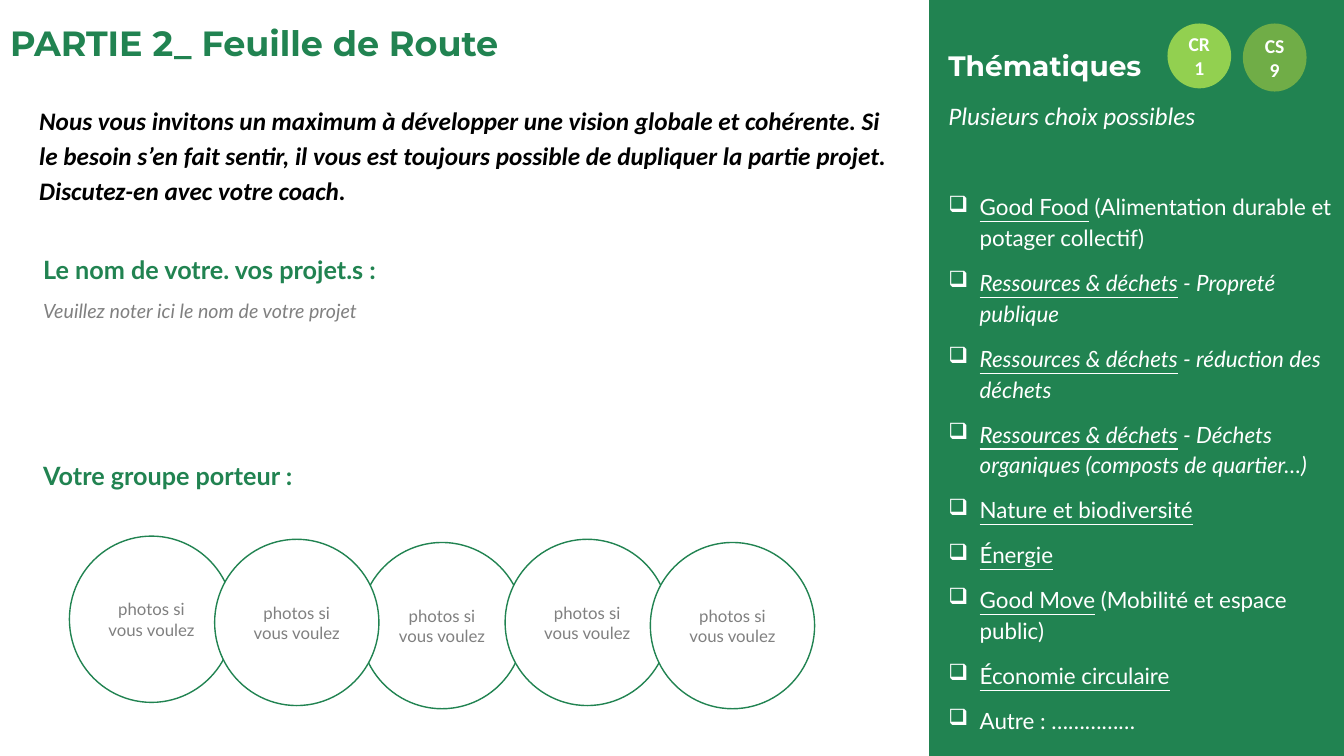
"""Build the road map slide: project name, team circles and a sidebar of themes."""
import pptx
import pptx.dml.color
import pptx.enum.shapes
import pptx.enum.text
import pptx.oxml.ns
import pptx.util
from lxml import etree

Cm, Pt = pptx.util.Cm, pptx.util.Pt
SHAPE = pptx.enum.shapes.MSO_SHAPE
ANCHOR = pptx.enum.text.MSO_ANCHOR
ALIGN = pptx.enum.text.PP_ALIGN

TITLE = "PARTIE 2_ Feuille de Route"
INTRO = (
    "Nous vous invitons un maximum à développer une vision globale et cohérente. "
    "Si le besoin s’en fait sentir, il vous est toujours possible de dupliquer "
    "la partie projet. Discutez-en avec votre coach."
)
HEADINGS = [("Le nom de votre. vos projet.s :", 6.17), ("Votre groupe porteur :", 11.35)]
HINT = "Veuillez noter ici le nom de votre projet"
MEMBER = "photos si vous voulez"
MEMBER_TOPS = [13.51, 13.59, 13.67, 13.59, 13.67]
MEMBER_ORDER = [2, 0, 1, 3, 4]
SIDEBAR_TITLE = "Thématiques"
SIDEBAR_NOTE = "Plusieurs choix possibles"
TOPICS = [
    ("Good Food", " (Alimentation durable et potager collectif)", False),
    ("Ressources & déchets", " - Propreté publique", True),
    ("Ressources & déchets", " - réduction des déchets", True),
    ("Ressources & déchets", " - Déchets organiques (composts de quartier…)", True),
    ("Nature et biodiversité", "", False),
    ("Énergie", "", False),
    ("Good Move", " (Mobilité et espace public)", False),
    ("Économie circulaire", "", False),
    ("", "Autre : ……………", False),
]
BADGES = [("CS\n9", 31.34, 1.68, "olive"), ("CR 1", 29.44, 1.6, "lime")]

THEME = {
    "colours": {
        "green": "218351", "lime": "92D050", "olive": "70AD47",
        "white": "FFFFFF", "grey": "808080", "black": "000000",
    },
    "text": {
        "title": ("green", {"name": "Montserrat", "size": Pt(25), "bold": True}),
        "intro": ("black", {"name": "Calibri", "size": Pt(18), "bold": True, "italic": True}),
        "heading": ("green", {"name": "Lato", "size": Pt(18), "bold": True}),
        "hint": ("grey", {"name": "Lato", "size": Pt(14), "italic": True}),
        "member": ("grey", {"name": "Lato", "size": Pt(12)}),
        "badge": ("white", {"name": "Calibri", "size": Pt(14), "bold": True}),
        "sidebar": ("white", {"name": "Montserrat", "size": Pt(20), "bold": True}),
        "note": ("white", {"name": "Calibri", "size": Pt(18), "italic": True}),
        "topic": ("white", {"name": "Lato", "size": Pt(16)}),
    },
}
LOOSE = {"line_spacing": 1.15, "space_after": Pt(10)}
FRAME = {
    "word_wrap": True, "margin_left": Cm(0.25), "margin_right": Cm(0.25),
    "margin_top": Cm(0.25), "margin_bottom": Cm(0.13),
}


def assign(target, values):
    """Set every attribute in values on target."""
    for key, value in values.items():
        setattr(target, key, value)


def colour(name):
    """Return the theme colour called name."""
    return pptx.dml.color.RGBColor.from_string(THEME["colours"][name])


def write(paragraph, words, style, **extra):
    """Add a run in a theme text style."""
    run = paragraph.add_run()
    run.text = words
    ink, font = THEME["text"][style]
    assign(run.font, {**font, **extra})
    run.font.color.rgb = colour(ink)


def add_text(slide, box, words="", style="topic", spacing=None):
    """Add a wrapping text box and return its frame."""
    frame = slide.shapes.add_textbox(*map(Cm, box)).text_frame
    assign(frame, FRAME)
    if words:
        assign(frame.paragraphs[0], spacing or {})
        write(frame.paragraphs[0], words, style)
    return frame


def add_panel(slide, kind, box, fill, line, words="", style="member"):
    """Add a filled shape with centred text."""
    panel = slide.shapes.add_shape(kind, *map(Cm, box))
    panel.shadow.inherit = False
    panel.fill.solid()
    panel.fill.fore_color.rgb = colour(fill)
    panel.line.color.rgb = colour(line)
    panel.line.width = Pt(1)
    frame = panel.text_frame
    assign(frame, {"word_wrap": True, "vertical_anchor": ANCHOR.MIDDLE})
    for index, line_words in enumerate(words.split("\n") if words else []):
        paragraph = frame.add_paragraph() if index else frame.paragraphs[0]
        paragraph.alignment = ALIGN.CENTER
        write(paragraph, line_words, style)


def add_topic(frame, theme, detail, italic):
    """Add one checkbox line with an underlined theme and plain detail."""
    paragraph = frame.add_paragraph()
    assign(paragraph, LOOSE)
    properties = paragraph._p.get_or_add_pPr()
    properties.set("marL", str(Cm(0.79)))
    properties.set("indent", str(-Cm(0.79)))
    bullet = etree.SubElement(properties, pptx.oxml.ns.qn("a:buChar"))
    bullet.set("char", "❑")
    for words, underline in ((theme, True), (detail, False)):
        if words:
            write(paragraph, words, "topic", italic=italic, underline=underline)


def add_title(slide):
    """Move and format the title placeholder."""
    title = slide.shapes.title
    assign(title, {"left": Cm(0), "top": Cm(0.2), "width": Cm(19.1), "height": Cm(1.9)})
    assign(title.text_frame, {"word_wrap": True, "vertical_anchor": ANCHOR.MIDDLE})
    assign(title.text_frame.paragraphs[0], {"alignment": ALIGN.LEFT, "line_spacing": 0.87})
    write(title.text_frame.paragraphs[0], TITLE, "title")


def add_sidebar(slide):
    """Add the green sidebar with its themes and badges."""
    add_panel(slide, SHAPE.RECTANGLE, (23.42, 0, 10.45, 19.05), "green", "green")
    frame = add_text(slide, (23.65, 0.84, 10.16, 18), SIDEBAR_TITLE, "sidebar", LOOSE)
    note = frame.add_paragraph()
    assign(note, {**LOOSE, "space_after": Pt(42)})
    write(note, SIDEBAR_NOTE, "note")
    for topic in TOPICS:
        add_topic(frame, *topic)
    for words, left, height, fill in BADGES:
        add_panel(slide, SHAPE.OVAL, (left, 0.61, 1.57, height), fill, fill, words, "badge")


def main():
    """Assemble and save the slide."""
    deck = pptx.Presentation()
    assign(deck, {"slide_width": Cm(33.87), "slide_height": Cm(19.05)})
    slide = deck.slides.add_slide(deck.slide_layouts[5])
    add_title(slide)
    add_text(slide, (0.74, 2.29, 22.07, 3.07), INTRO, "intro", LOOSE)
    add_text(slide, (0.84, 7.29, 15.06, 2.11), HINT, "hint")
    for words, top in HEADINGS:
        add_text(slide, (0.84, top, 17.22, 1.1), words, "heading")
    add_sidebar(slide)
    for index in MEMBER_ORDER:
        box = (1.75 + 3.66 * index, MEMBER_TOPS[index], 4.14, 4.19)
        add_panel(slide, SHAPE.OVAL, box, "white", "green", MEMBER)
    deck.save("out.pptx")


if __name__ == "__main__":
    main()
